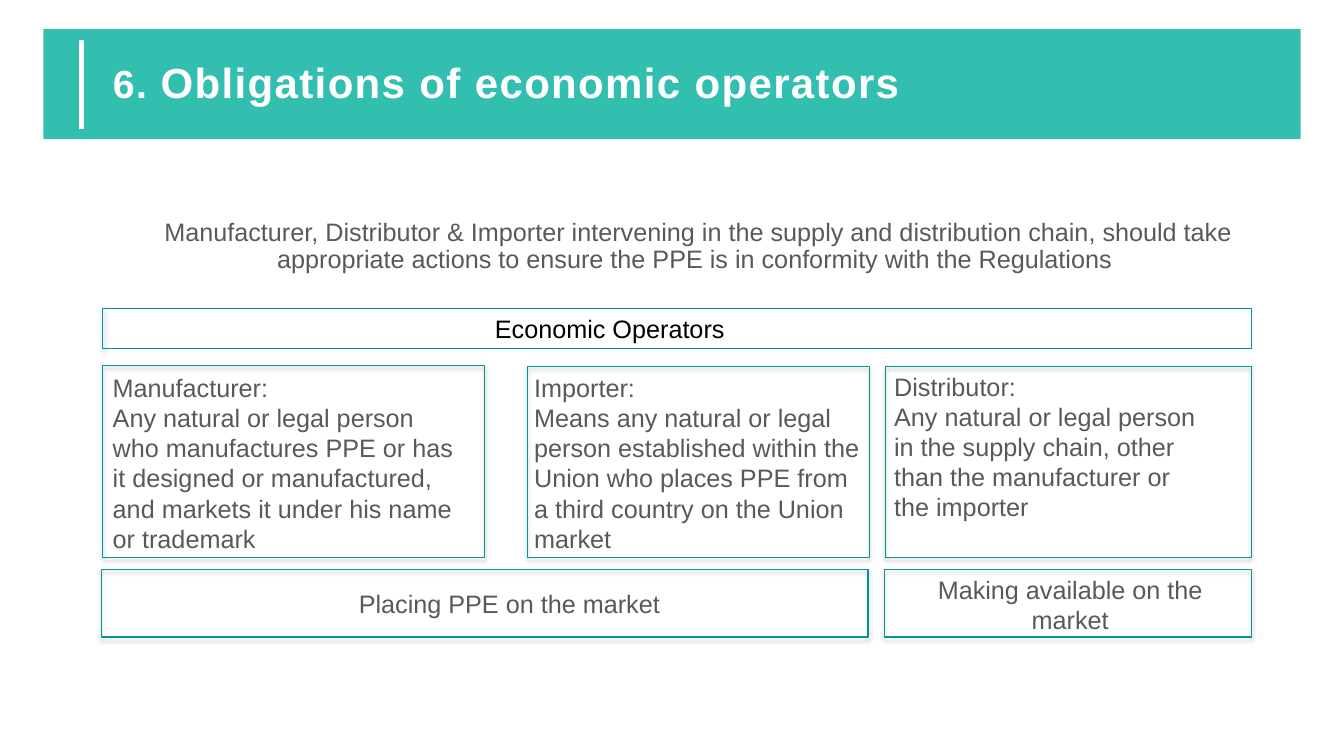
from dataclasses import dataclass

from lxml import etree
from pptx import Presentation
from pptx.dml.color import RGBColor
from pptx.enum.shapes import MSO_CONNECTOR, MSO_SHAPE
from pptx.enum.text import MSO_ANCHOR, MSO_AUTO_SIZE, PP_ALIGN
from pptx.oxml import parse_xml
from pptx.oxml.ns import nsdecls, qn
from pptx.shapes.autoshape import Shape
from pptx.slide import Slide
from pptx.text.text import _Paragraph
from pptx.util import Inches, Pt

RECTANGLE = MSO_SHAPE.RECTANGLE
STRAIGHT = MSO_CONNECTOR.STRAIGHT
LEFT, CENTER = PP_ALIGN.LEFT, PP_ALIGN.CENTER
TOP, MIDDLE = MSO_ANCHOR.TOP, MSO_ANCHOR.MIDDLE
NO_AUTOFIT = MSO_AUTO_SIZE.NONE


@dataclass(frozen=True)
class Theme:
    font: str = "Arial"
    band: RGBColor = RGBColor(0x00, 0xAF, 0x9D)
    band_alpha: int = 80
    frame: RGBColor = RGBColor(0x00, 0x96, 0x96)
    text: RGBColor = RGBColor(0x58, 0x59, 0x58)
    heading: RGBColor = RGBColor(0x00, 0x00, 0x00)
    white: RGBColor = RGBColor(0xFF, 0xFF, 0xFF)
    number_size: int = 28
    title_size: int = 30
    body_size: int = 18


@dataclass(frozen=True)
class Box:
    left: float
    top: float
    width: float
    height: float

    def emu(self) -> tuple[int, int, int, int]:
        return (Inches(self.left), Inches(self.top),
                Inches(self.width), Inches(self.height))


@dataclass(frozen=True)
class Label:
    box: Box
    lines: tuple[str, ...]
    color: RGBColor
    align: PP_ALIGN = LEFT
    line_spacing: float = 1.0


THEME = Theme()

FRAMES = (
    Box(1.02, 3.06, 11.39, 0.4),   # economic operators
    Box(1.02, 3.63, 3.79, 1.9),    # manufacturer
    Box(5.23, 3.64, 3.39, 1.89),   # importer
    Box(8.78, 3.64, 3.63, 1.89),   # distributor
    Box(1.01, 5.65, 7.6, 0.67),    # placing on the market
    Box(8.77, 5.65, 3.64, 0.67),   # making available
)

LABELS = (
    Label(Box(1.23, 2.13, 11.39, 0.65),
          ("Manufacturer, Distributor & Importer intervening in the supply and "
           "distribution chain, should take appropriate actions to ensure the PPE "
           "is in conformity with the Regulations ",), THEME.text, CENTER, 0.9),
    Label(Box(4.81, 3.06, 3.81, 0.4), ("Economic Operators",), THEME.heading),
    Label(Box(1.02, 3.64, 3.7, 1.9),
          ("Manufacturer:",
           "Any natural or legal person who manufactures PPE or has it designed or "
           "manufactured, and markets it under his name or trademark"), THEME.text),
    Label(Box(5.2, 3.64, 3.43, 1.9),
          ("Importer:",
           "Means any natural or legal person established within the Union who "
           "places PPE from a third country on the Union market"), THEME.text),
    Label(Box(8.77, 3.63, 3.23, 1.9),
          ("Distributor:",
           "Any natural or legal person in the supply chain, other than the "
           "manufacturer or the importer"), THEME.text),
    Label(Box(3.46, 5.79, 3.21, 0.4), ("Placing PPE on the market",), THEME.text),
    Label(Box(8.8, 5.65, 3.63, 0.71), ("Making available on the market",),
          THEME.text, CENTER),
)


def add_run(paragraph: _Paragraph, text: str, size: int, color: RGBColor,
            bold: bool = False, spacing: int = 0) -> None:
    run = paragraph.add_run()
    run.text = text
    run.font.name = THEME.font
    run.font.size = Pt(size)
    run.font.bold = bold
    run.font.color.rgb = color
    if spacing:
        run.font._element.set("spc", str(spacing * 100))


def add_rectangle(slide: Slide, box: Box) -> Shape:
    shape = slide.shapes.add_shape(RECTANGLE, *box.emu())
    shape.shadow.inherit = False
    return shape


def add_header(slide: Slide) -> None:
    # Translucent band
    band = add_rectangle(slide, Box(0.43, 0.29, 12.47, 1.09))
    band.fill.solid()
    band.fill.fore_color.rgb = THEME.band
    band.line.fill.background()
    color = band.element.spPr.find(qn("a:solidFill"))[0]
    etree.SubElement(color, qn("a:alpha"), val=str(THEME.band_alpha * 1000))

    # White accent line
    accent = slide.shapes.add_connector(
        STRAIGHT, Inches(0.81), Inches(0.4), Inches(0.81), Inches(1.28))
    accent.line.color.rgb = THEME.white
    accent.line.width = Pt(4)
    etree.SubElement(accent.element.spPr, qn("a:effectLst"))

    # Title, raised above the band
    title = slide.shapes.title
    title.left, title.top, title.width, title.height = Box(1.02, 0.4, 11.72, 0.89).emu()
    accent.element.addnext(title.element)
    frame = title.text_frame
    frame.auto_size = NO_AUTOFIT
    frame.vertical_anchor = MIDDLE
    paragraph = frame.paragraphs[0]
    paragraph.alignment = LEFT
    paragraph.line_spacing = 0.9
    add_run(paragraph, "6. ", THEME.number_size, THEME.white, True, 1)
    add_run(paragraph, "Obligations of economic operators",
            THEME.title_size, THEME.white, True, 1)


def add_frame(slide: Slide, box: Box) -> None:
    shape = add_rectangle(slide, box)
    shape.fill.background()
    shape.line.color.rgb = THEME.frame
    shape.line.width = Pt(0.75)
    shadow = parse_xml(
        f'<a:outerShdw {nsdecls("a")} blurRad="{Pt(3.1)}" dist="{Pt(1.8)}" '
        'dir="5400000" rotWithShape="0"><a:srgbClr val="000000">'
        '<a:alpha val="35000"/></a:srgbClr></a:outerShdw>')
    shape.element.spPr.find(qn("a:effectLst")).append(shadow)


def add_label(slide: Slide, label: Label) -> None:
    frame = slide.shapes.add_textbox(*label.box.emu()).text_frame
    frame.word_wrap = True
    frame.vertical_anchor = TOP
    for index, line in enumerate(label.lines):
        paragraph = frame.add_paragraph() if index else frame.paragraphs[0]
        paragraph.alignment = label.align
        paragraph.line_spacing = label.line_spacing
        add_run(paragraph, line, THEME.body_size, label.color)


def main() -> None:
    presentation = Presentation()
    presentation.slide_width = Inches(13.33)
    presentation.slide_height = Inches(7.5)
    slide = presentation.slides.add_slide(presentation.slide_layouts[5])

    add_header(slide)
    for box in FRAMES:
        add_frame(slide, box)
    for label in LABELS:
        add_label(slide, label)

    presentation.save("out.pptx")


if __name__ == "__main__":
    main()
